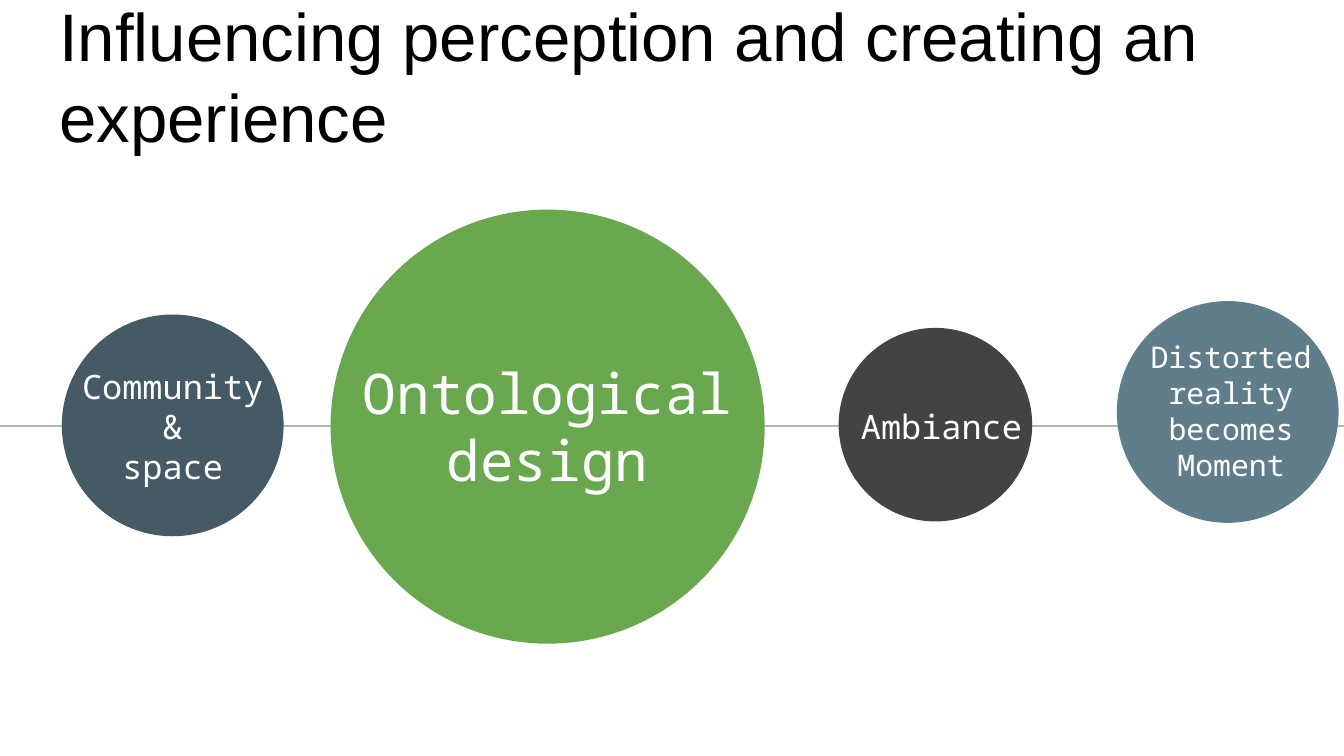
from lxml import etree
from pptx import Presentation
from pptx.dml.color import RGBColor
from pptx.enum import shapes, text
from pptx.oxml.ns import qn
from pptx.util import Inches, Pt

# fill, circle (left, top, diameter), label box (left, top, width, height), size, label
STAGES = [
    ("455A64", (0.46, 2.34, 1.65), (0.49, 2.84, 1.59, 0.66), 18, "Community\n&\nspace"),
    ("6AA84F", (2.46, 1.56, 3.23), (2.46, 2.84, 3.23, 0.66), 30, "Ontological design"),
    ("434343", (6.24, 2.44, 1.44), (6.18, 2.84, 1.65, 0.66), 18, "Ambiance"),
    ("607D8B", (8.31, 2.24, 1.65), (8.44, 2.6, 1.44, 0.91), 16,
     "Distorted reality becomes Moment"),
]


def color(hex_code):
    return RGBColor.from_string(hex_code)


def format_text(frame, size, font, hex_code, align, anchor):
    frame.word_wrap = True
    frame.auto_size = text.MSO_AUTO_SIZE.NONE
    frame.vertical_anchor = anchor
    frame.margin_left = frame.margin_right = Inches(0.1)
    frame.margin_top = frame.margin_bottom = Inches(0.1)
    for paragraph in frame.paragraphs:
        paragraph.alignment = align
        paragraph.line_spacing = 1.0
        for run in paragraph.runs:
            run.font.size = Pt(size)
            run.font.name = font
            run.font.color.rgb = color(hex_code)


def add_timeline(slide):
    timeline = slide.shapes.add_connector(
        shapes.MSO_CONNECTOR.STRAIGHT,
        Inches(-0.01), Inches(3.17), Inches(10), Inches(3.17))
    timeline.line.color.rgb = color("B7B7B7")
    timeline.line.width = Pt(1.5)
    etree.SubElement(timeline._element.spPr, qn("a:effectLst"))


def set_title(slide, wording):
    title = slide.shapes.title
    title.left, title.top = Inches(0.34), Inches(0.35)
    title.width, title.height = Inches(9.32), Inches(0.91)
    title.text_frame.text = wording
    format_text(title.text_frame, 36, "Arial", "000000",
                text.PP_ALIGN.LEFT, text.MSO_ANCHOR.BOTTOM)


def add_circle(slide, fill, left, top, diameter):
    circle = slide.shapes.add_shape(
        shapes.MSO_SHAPE.OVAL, Inches(left), Inches(top),
        Inches(diameter), Inches(diameter))
    circle.shadow.inherit = False
    circle.fill.solid()
    circle.fill.fore_color.rgb = color(fill)
    circle.line.fill.background()


def add_label(slide, box, size, wording):
    label = slide.shapes.add_textbox(*(Inches(length) for length in box))
    label.text_frame.text = wording
    format_text(label.text_frame, size, "Noto Sans Mono", "FFFFFF",
                text.PP_ALIGN.CENTER, text.MSO_ANCHOR.MIDDLE)


def main():
    deck = Presentation()
    deck.slide_width = Inches(10)
    deck.slide_height = deck.slide_width * 9 // 16
    slide = deck.slides.add_slide(deck.slide_layouts.get_by_name("Title Only"))
    set_title(slide, "Influencing perception and creating an experience")
    add_timeline(slide)
    for fill, circle, box, size, wording in STAGES:
        add_circle(slide, fill, *circle)
        add_label(slide, box, size, wording)
    deck.save("out.pptx")


if __name__ == "__main__":
    main()
